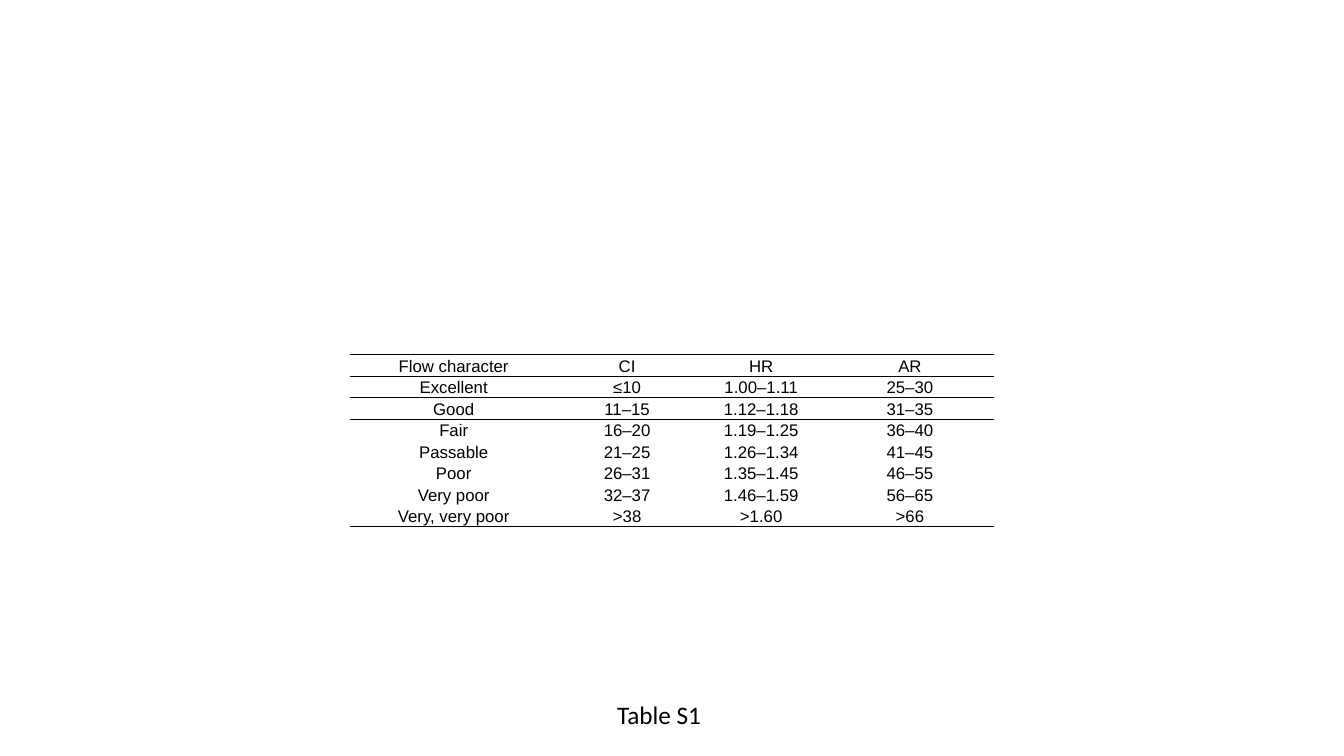
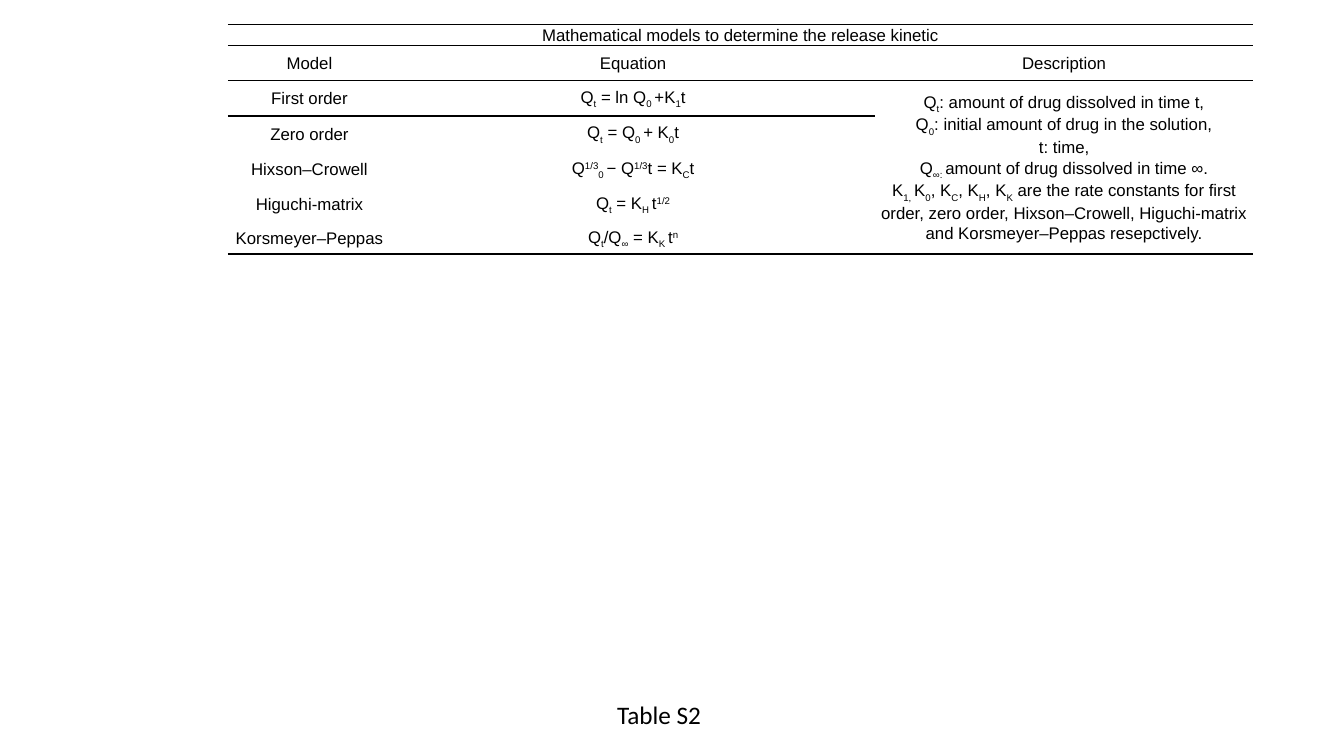
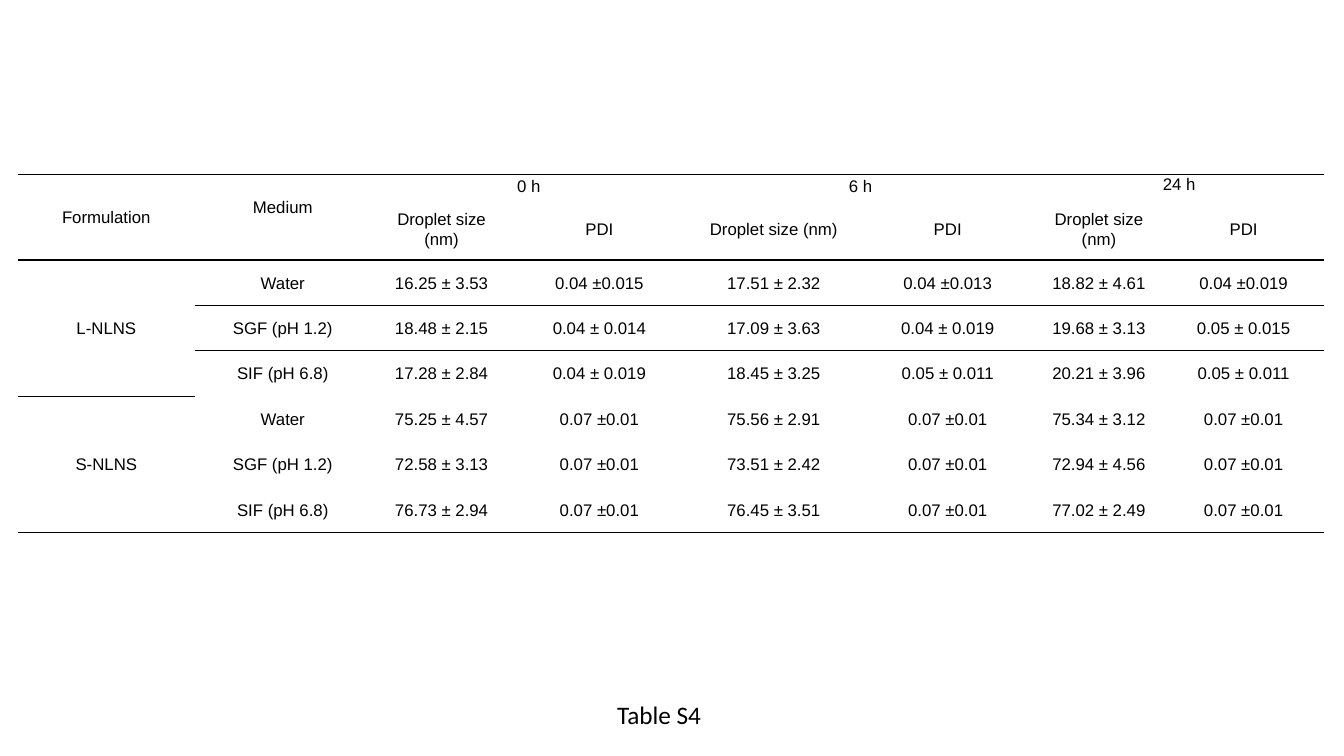
from dataclasses import dataclass

from lxml import etree
from pptx import Presentation
from pptx.dml.color import RGBColor
from pptx.enum import text
from pptx.oxml.ns import qn
from pptx.util import Inches, Pt


@dataclass(frozen=True)
class Theme:
    ink: str = "000000"
    table_font: str = "Arial"
    table_size: int = 12
    caption_font: str = "Calibri"
    caption_size: int = 18
    line_spacing: float = 1.07
    rule_width: int = 1
    plain_style: str = "{2D5ABB26-0587-4C30-8999-92F81FD0307C}"


theme = Theme()
BASELINES = {"_": "-25000", "^": "30000"}


def add_run(p, words, font, size):
    r = p.add_run()
    if words[:1] in BASELINES:
        r.font.size = Pt(size)
        r._r.get_or_add_rPr().set("baseline", BASELINES[words[0]])
        words = words[1:]
    r.text = words
    r.font.name = font
    r.font.size = Pt(size)
    r.font.color.rgb = RGBColor.from_string(theme.ink)


def add_rule(cell, side):
    ln = etree.SubElement(cell._tc.get_or_add_tcPr(), qn("a:" + side),
                          w=str(Pt(theme.rule_width)))
    fill = etree.SubElement(ln, qn("a:solidFill"))
    etree.SubElement(fill, qn("a:srgbClr"), val=theme.ink)


flow_rows = [
    ["Flow character", "CI", "HR", "AR"],
    ["Excellent", "≤10", "1.00–1.11", "25–30"],
    ["Good", "11–15", "1.12–1.18", "31–35"],
    ["Fair", "16–20", "1.19–1.25", "36–40"],
    ["Passable", "21–25", "1.26–1.34", "41–45"],
    ["Poor", "26–31", "1.35–1.45", "46–55"],
    ["Very poor", "32–37", "1.46–1.59", "56–65"],
    ["Very, very poor", ">38", ">1.60", ">66"],
]

description = "\n".join([
    "Q|_t|: amount of drug dissolved in time t,",
    "Q|_0|: initial amount of drug in the solution,",
    "t: time,",
    "Q|_∞: |amount of drug dissolved in time ∞.",
    "K|_1, |K|_0|, K|_C|, K|_H|, K|_K| are the rate constants for first order, "
    "zero order, Hixson–Crowell, Higuchi-matrix and Korsmeyer–Peppas resepctively.",
])
model_rows = [
    ["Mathematical models to determine the release kinetic", "", ""],
    ["Model", "Equation", "Description"],
    ["First order", "Q|_t| = ln Q|_0 |+K|_1|t", description],
    ["Zero order", "Q|_t| = Q|_0 |+ K|_0|t", ""],
    ["Hixson–Crowell", "Q|^1/3|_0 |− Q|^1/3|t = K|_C|t", ""],
    ["Higuchi-matrix", "Q|_t| = K|_H |t|^1/2", ""],
    ["Korsmeyer–Peppas", "Q|_t|/Q|_∞| = K|_K |t|^n", ""],
]

stability_rows = [
    ["Formulation", "Medium", "0 h", "", "6 h", "", "24 h", ""],
    ["", ""] + ["Droplet size (nm)", "PDI"] * 3,
    ["L-NLNS", "Water", "16.25 ± 3.53", "0.04 ±0.015", "17.51 ± 2.32",
     "0.04 ±0.013", "18.82 ± 4.61", "0.04 ±0.019"],
    ["", "SGF (pH 1.2)", "18.48 ± 2.15", "0.04 ± 0.014", "17.09 ± 3.63",
     "0.04 ± 0.019", "19.68 ± 3.13", "0.05 ± 0.015"],
    ["", "SIF (pH 6.8)", "17.28 ± 2.84", "0.04 ± 0.019", "18.45 ± 3.25",
     "0.05 ± 0.011", "20.21 ± 3.96", "0.05 ± 0.011"],
    ["S-NLNS", "Water", "75.25 ± 4.57", "0.07 ±0.01", "75.56 ± 2.91",
     "0.07 ±0.01", "75.34 ± 3.12", "0.07 ±0.01"],
    ["", "SGF (pH 1.2)", "72.58 ± 3.13", "0.07 ±0.01", "73.51 ± 2.42",
     "0.07 ±0.01", "72.94 ± 4.56", "0.07 ±0.01"],
    ["", "SIF (pH 6.8)", "76.73 ± 2.94", "0.07 ±0.01", "76.45 ± 3.51",
     "0.07 ±0.01", "77.02 ± 2.49", "0.07 ±0.01"],
]

slides = [
    dict(caption="Table S1", at=(3.47, 3.52), rows=flow_rows,
         widths=[2.06, 1.38, 1.28, 1.67], heights=[1.71 / 8] * 8, inset=0.07,
         merges=[], rules=[(0, 0, 3), (1, 0, 3), (2, 0, 3), (8, 0, 3)],
         top=[], raised=[]),
    dict(caption="Table S2", at=(2.26, 0.24), rows=model_rows,
         widths=[1.62, 4.8, 3.75], heights=[0.21] + [0.35] * 5 + [0.32], inset=0.04,
         merges=[(0, 0, 0, 2), (2, 2, 6, 2)],
         rules=[(0, 0, 2), (1, 0, 2), (2, 0, 2), (7, 0, 2)],
         top=[], raised=[]),
    dict(caption="Table S4", at=(0.18, 1.73), rows=stability_rows,
         widths=[1.75, 1.75, 1.4, 1.73, 1.73, 1.72, 1.28, 1.59],
         heights=[0.23, 0.62] + [0.45] * 6, inset=0.07,
         merges=[(0, 0, 1, 0), (0, 1, 1, 1), (0, 2, 0, 3), (0, 4, 0, 5),
                 (0, 6, 0, 7), (2, 0, 4, 0), (5, 0, 7, 0)],
         rules=[(0, 0, 7), (2, 0, 7), (3, 1, 7), (5, 0, 0), (8, 0, 7)],
         top=["24 h"], raised=["Medium"]),
]

prs = Presentation()
prs.slide_width, prs.slide_height = Inches(13.33), Inches(7.5)

for item in slides:
    s = prs.slides.add_slide(prs.slide_layouts[5])

    title = s.shapes.title
    title.left, title.top = Inches(6.02), Inches(6.89)
    title.width, title.height = Inches(1.21), Inches(0.4)
    tf = title.text_frame
    tf.auto_size = text.MSO_AUTO_SIZE.NONE
    tf.vertical_anchor = text.MSO_ANCHOR.TOP
    p = tf.paragraphs[0]
    p.alignment = text.PP_ALIGN.LEFT
    add_run(p, item["caption"], theme.caption_font, theme.caption_size)

    rows, widths, heights = item["rows"], item["widths"], item["heights"]
    left, top = item["at"]
    table = s.shapes.add_table(len(rows), len(widths), Inches(left), Inches(top),
                               Inches(sum(widths)), Inches(sum(heights))).table
    table.first_row = table.horz_banding = False
    table._tbl.tblPr.find(qn("a:tableStyleId")).text = theme.plain_style
    for column, width in zip(table.columns, widths):
        column.width = Inches(width)
    for row, height in zip(table.rows, heights):
        row.height = Inches(height)

    edges = set()
    for line, first, last in item["rules"]:
        for c in range(first, last + 1):
            edges |= {(line, c, "lnT"), (line - 1, c, "lnB")}
    for r1, c1, r2, c2 in item["merges"]:
        table.cell(r1, c1).merge(table.cell(r2, c2))
        if (r2, c1, "lnB") in edges:
            edges.add((r1, c1, "lnB"))

    for i, row in enumerate(rows):
        for j, words in enumerate(row):
            cell = table.cell(i, j)
            cell.margin_left = cell.margin_right = Inches(item["inset"])
            cell.margin_top = 0
            cell.margin_bottom = Inches(0.21 if words in item["raised"] else 0)
            cell.vertical_anchor = (text.MSO_ANCHOR.TOP if words in item["top"]
                                    else text.MSO_ANCHOR.MIDDLE)
            for side in ("lnT", "lnB"):
                if (i, j, side) in edges:
                    add_rule(cell, side)
            cell.fill.background()
            if cell.is_spanned:
                continue
            tf = cell.text_frame
            for k, paragraph in enumerate(words.split("\n")):
                p = tf.add_paragraph() if k else tf.paragraphs[0]
                p.alignment = text.PP_ALIGN.CENTER
                p.line_spacing = theme.line_spacing
                for part in paragraph.split("|"):
                    add_run(p, part, theme.table_font, theme.table_size)

prs.save("out.pptx")
